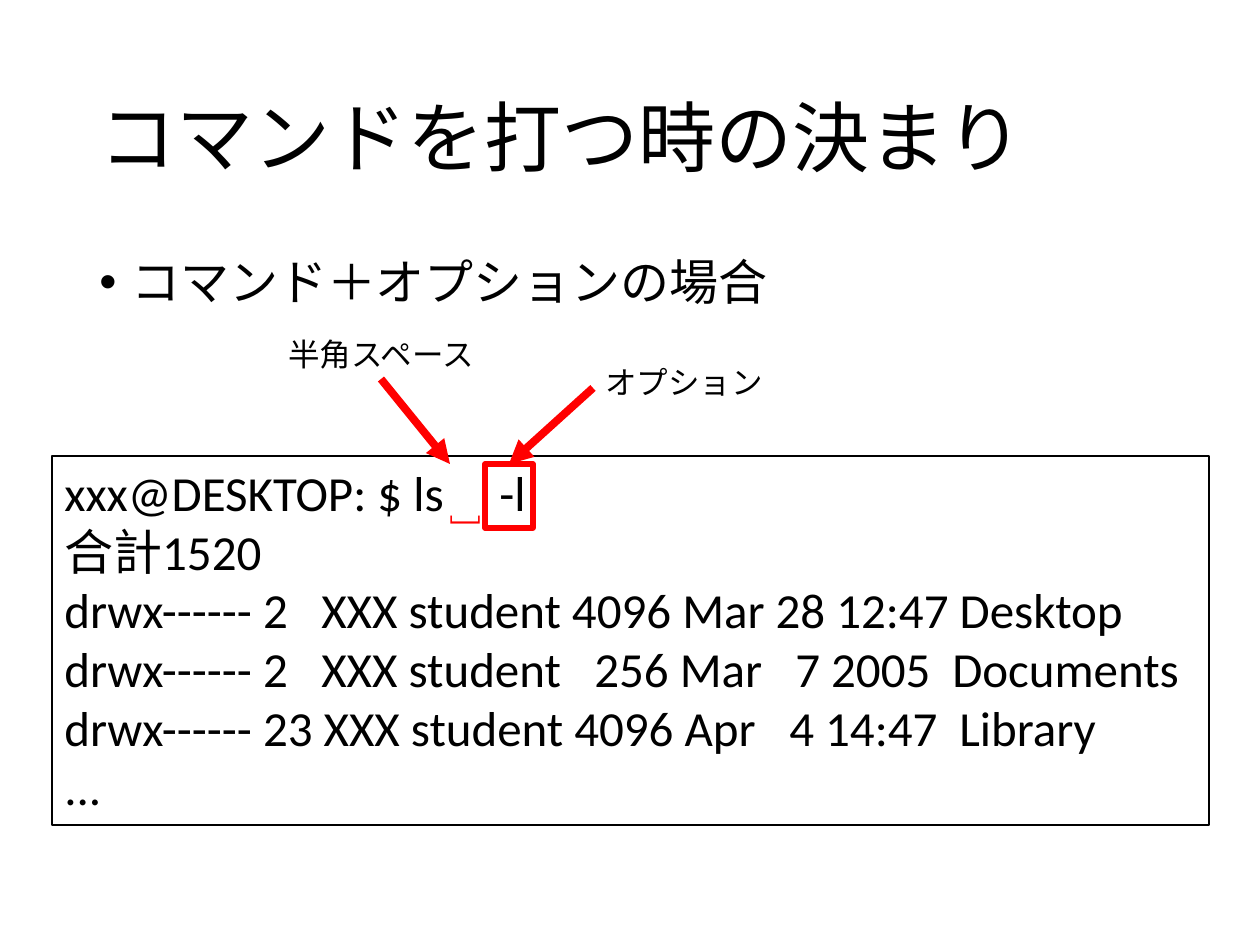
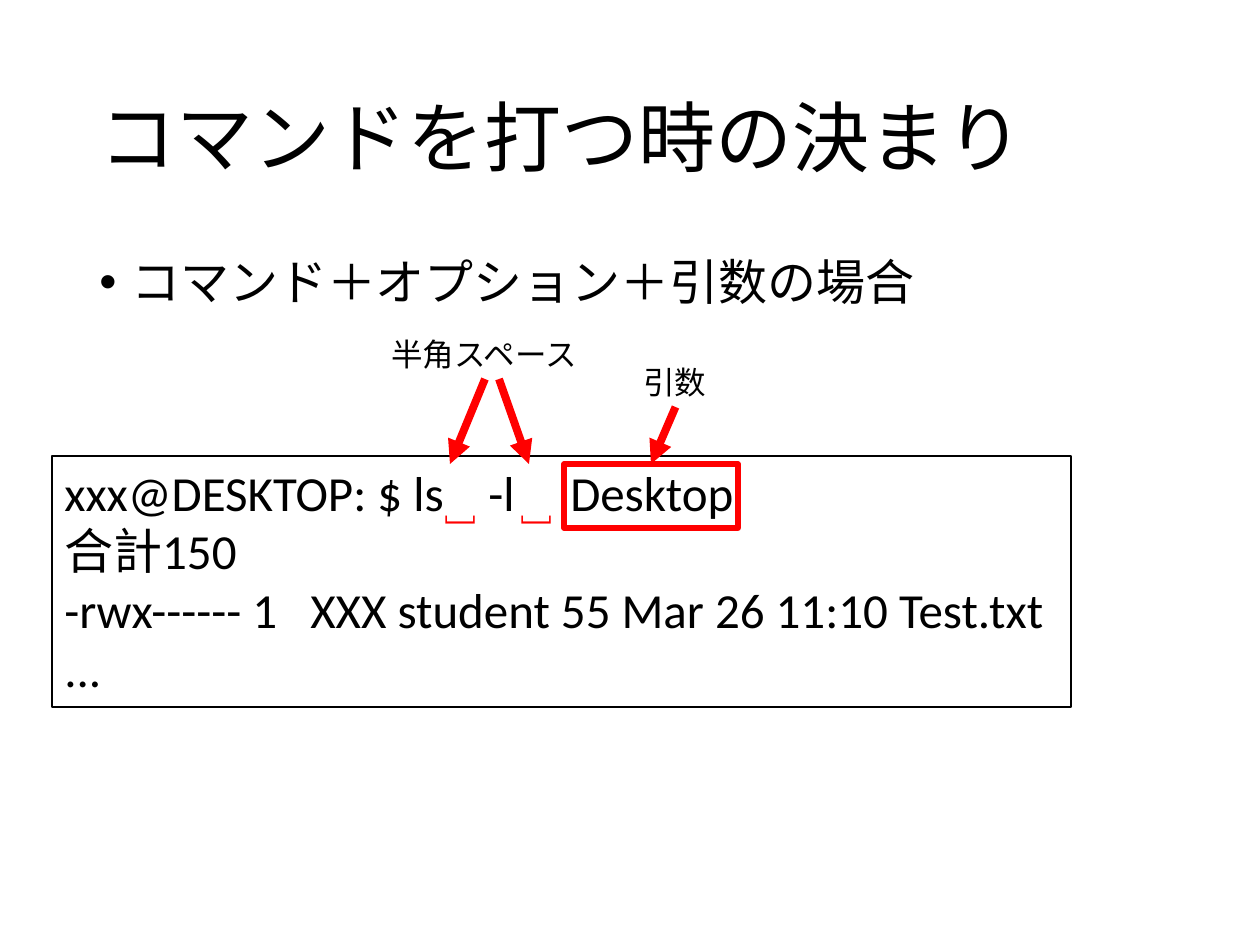
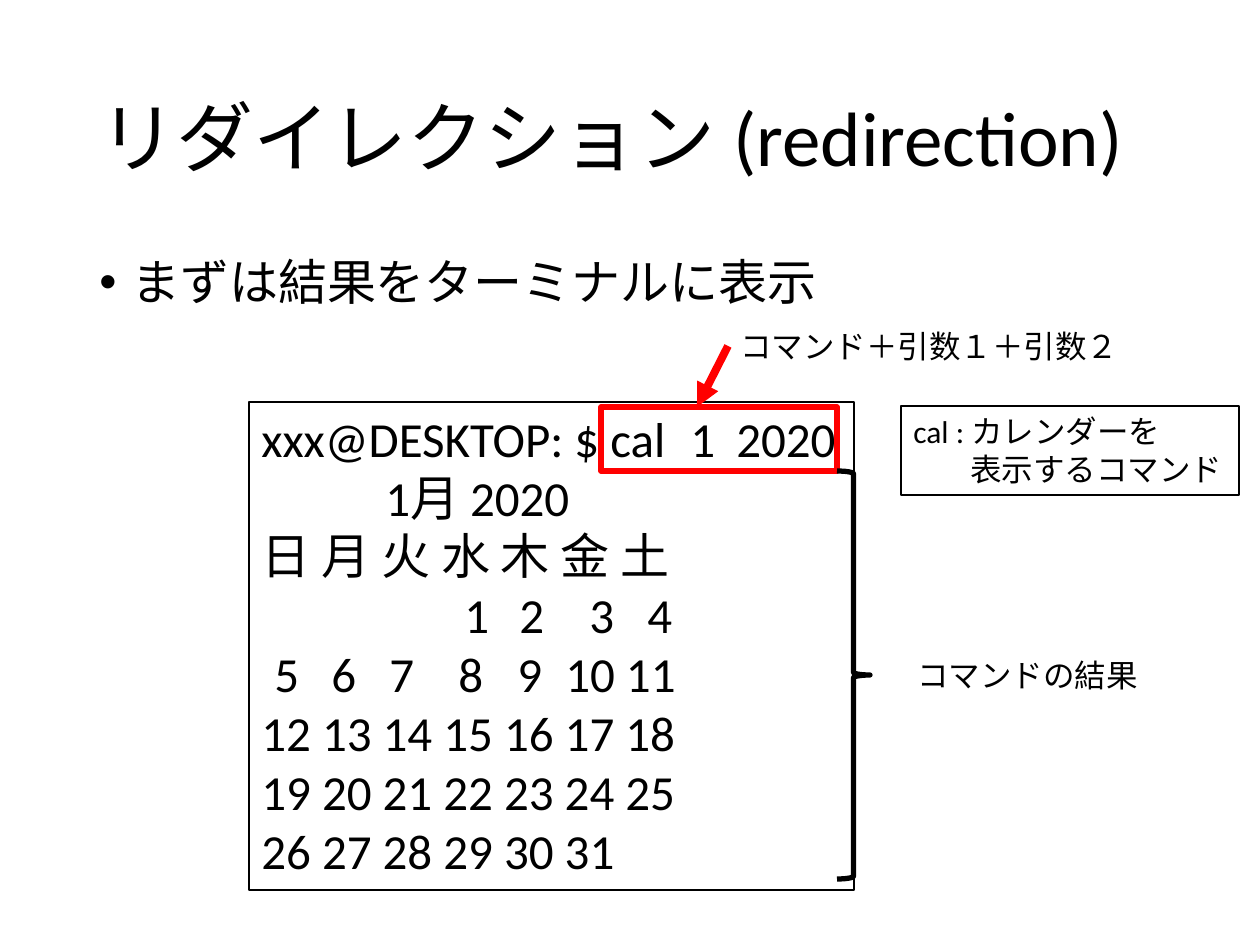
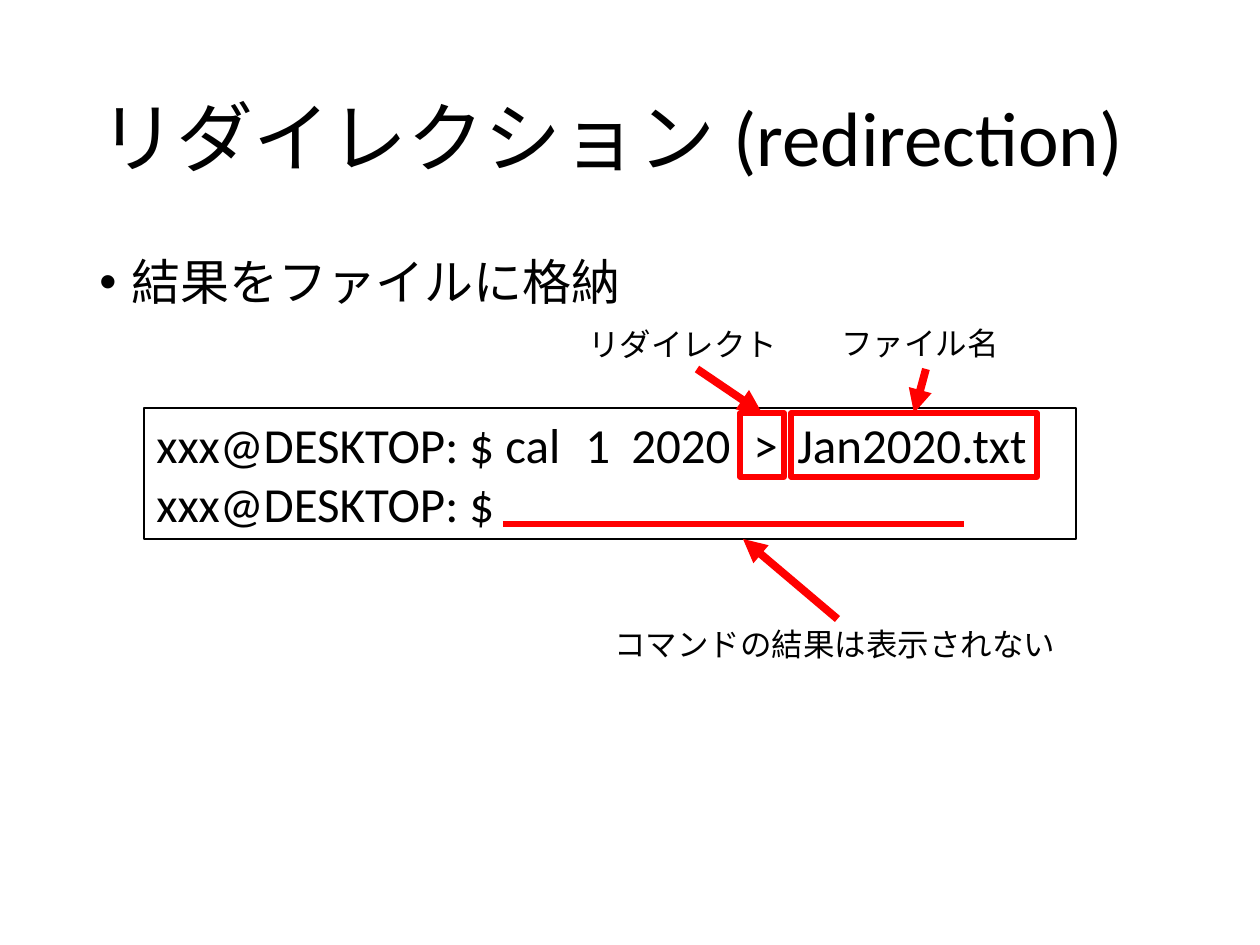
"""Build four slides on shell commands and redirection."""
from pptx import Presentation
from pptx.dml.color import RGBColor as Rgb
from pptx.enum.shapes import MSO_CONNECTOR as Conn, MSO_SHAPE as Kind
from pptx.enum.text import MSO_ANCHOR as Anchor, MSO_AUTO_SIZE as Auto, PP_ALIGN as Align
from pptx.oxml.ns import qn
from pptx.util import Pt
from lxml.etree import SubElement as Sub

HUES = {"ink": "000000", "mark": "FF0000"}
FONT = "Calibri"
SCALE = 914400 / 126
SIZE = (1260, 945)
TITLE = (87, 50, 1086, 183)
BODY = (87, 252, 1086, 600)
INDENT = 32
NEAR = 2
ROW = 50
GLYPH = (57, ROW)
FRAME = 64

RULES = "コマンドを打つ時の決まり"
REDIR = "リダイレクション (redirection)"
SLIDES = [
    {
        "title": RULES,
        "body": "コマンド＋オプションの場合",
        "boxes": [((52, 456, 1157, 369), 28, [
            ("xxx@DESKTOP: $ ls\t-l", [435]),
            ("合計1520", []),
            ("drwx------ 2\tXXX student 4096 Mar 28 12:47 Desktop", [257]),
            ("drwx------ 2\tXXX student\t256 Mar\t7 2005\tDocuments",
             [257, 530, 731, 888]),
            ("drwx------ 23 XXX student 4096 Apr\t4 14:47\tLibrary", [725, 895]),
            ("...", []),
        ])],
        "frames": [(485, 464, 48)],
        "labels": [("半角スペース", 276, 329, 217), ("オプション", 593, 357, 184)],
        "arrows": [(381, 379, 450, 464), (593, 388, 508, 464)],
        "gaps": [(436, 505)],
    },
    {
        "title": RULES,
        "body": "コマンド＋オプション＋引数の場合",
        "boxes": [((52, 456, 1019, 251), 28, [
            ("xxx@DESKTOP: $ ls\t-l\tDesktop", [424, 506]),
            ("合計150", []),
            ("-rwx------ 1\tXXX student 55 Mar 26 11:10 Test.txt", [246]),
            ("...", []),
        ])],
        "frames": [(564, 464, 174)],
        "labels": [("半角スペース", 379, 329, 217), ("引数", 631, 357, 89)],
        "arrows": [(485, 379, 450, 464), (677, 407, 651, 464), (499, 379, 529, 464)],
        "gaps": [(431, 505), (507, 505)],
    },
    {
        "title": REDIR,
        "body": "まずは結果をターミナルに表示",
        "boxes": [
            ((249, 402, 605, 488), 28, [
                ("xxx@DESKTOP: $ cal\t1\t2020", [429, 475]),
                ("\t1月 2020", [124]),
                ("日 月 火 水 木 金 土", []),
                ("\t1\t2\t3\t4", [203, 258, 328, 386]),
                ("\t5\t6\t7\t8\t9\t10 11", [13, 70, 128, 197, 256, 304]),
                ("12 13 14 15 16 17 18", []),
                ("19 20 21 22 23 24 25", []),
                ("26 27 28 29 30 31", []),
            ]),
            ((901, 406, 338, 89), 18, [
                ("cal : カレンダーを", []),
                ("\t表示するコマンド", [57]),
            ]),
        ],
        "frames": [(601, 407, 236)],
        "labels": [("コマンド＋引数１＋引数２", 728, 321, 407),
                   ("コマンドの結果", 905, 650, 248)],
        "arrows": [(728, 348, 697, 407)],
        "braces": [(837, 471, 33, 408)],
    },
    {
        "title": REDIR,
        "body": "結果をファイルに格納",
        "boxes": [((144, 408, 932, 131), 28, [
            ("xxx@DESKTOP: $ cal\t1\t2020\t>\tJan2020.txt", [429, 475, 597, 641]),
            ("xxx@DESKTOP: $", []),
        ])],
        "frames": [(740, 413, 44), (791, 413, 246)],
        "labels": [("リダイレクト", 576, 319, 217),
                   ("コマンドの結果は表示されない", 602, 619, 471),
                   ("ファイル名", 829, 318, 184)],
        "arrows": [(697, 369, 762, 413), (926, 369, 915, 413), (837, 619, 743, 539)],
        "rules": [(503, 524, 964, 524)],
    },
]


def emu(*nums):
    """Turn px into EMU."""
    return [round(n * SCALE) for n in nums]


def style(item, **vals):
    """Set each given attribute on an item."""
    for name, val in vals.items():
        setattr(item, name, val)


def stroke(line, hue, width):
    """Give a line its colour and width."""
    line.color.rgb = Rgb.from_string(HUES[hue])
    line.width = Pt(width)


def write(shape, lines, size, hue="ink", **frame):
    """Fill a shape with lines of text and their tab stops."""
    text = shape.text_frame
    style(text, **frame)
    for i, (words, stops) in enumerate(lines):
        par = text.paragraphs[0] if i == 0 else text.add_paragraph()
        par.alignment = Align.LEFT
        run = par.add_run()
        run.text = words
        style(run.font, name=FONT, size=Pt(size))
        run.font.color.rgb = Rgb.from_string(HUES[hue])
        if stops:
            tabs = Sub(par._p.get_or_add_pPr(), qn("a:tabLst"))
            for stop in emu(*stops):
                Sub(tabs, qn("a:tab"), pos=str(stop), algn="l")
    return text.paragraphs[0]


def note(slide, words, area, size, **look):
    """Add a text box with one line."""
    box = slide.shapes.add_textbox(*emu(*area))
    return box, write(box, [(words, [])], size, **look)


def outline(slide, kind, area, hue, width):
    """Add an unfilled shape with a coloured edge."""
    shape = slide.shapes.add_shape(kind, *emu(*area))
    shape.shadow.inherit = False
    shape.fill.background()
    stroke(shape.line, hue, width)
    return shape


def bullet(par):
    """Make a paragraph a bullet point."""
    style(par, line_spacing=0.9, space_before=Pt(10))
    props = par._p.get_or_add_pPr()
    step = emu(INDENT)[0]
    props.set("marL", str(step))
    props.set("indent", str(-step))
    Sub(props, qn("a:buFont"), typeface="Arial")
    Sub(props, qn("a:buChar"), char="•")


def join(link, ends, hosts):
    """Tie the ends of a link to the side middles they touch."""
    for tie, (x, y) in zip((link.begin_connect, link.end_connect), ends):
        for host, (left, top, wide, high) in hosts:
            mid, half = left + wide / 2, top + high / 2
            sites = [(mid, top), (left, half), (mid, top + high), (left + wide, half)]
            for i, (sx, sy) in enumerate(sites):
                if abs(sx - x) <= NEAR and abs(sy - y) <= NEAR:
                    tie(host, i)


def link(slide, ends, width, hosts=(), head=False):
    """Add a straight line, with an arrowhead if asked."""
    line = slide.shapes.add_connector(Conn.STRAIGHT, *emu(*ends))
    stroke(line.line, "mark", width)
    props = line._element.spPr
    if head:
        Sub(props.find(qn("a:ln")), qn("a:tailEnd"), type="triangle")
    Sub(props, qn("a:effectLst"))
    join(line, (ends[:2], ends[2:]), hosts)


def draw(slide, data):
    """Draw one slide from its data."""
    _, head = note(slide, data["title"], TITLE, 44, word_wrap=True,
                   vertical_anchor=Anchor.MIDDLE)
    head.line_spacing = 0.9
    _, point = note(slide, data["body"], BODY, 28, word_wrap=True)
    bullet(point)
    for area, size, lines in data["boxes"]:
        box = outline(slide, Kind.RECTANGLE, area, "ink", 0.75)
        write(box, lines, size, word_wrap=True, vertical_anchor=Anchor.TOP,
              auto_size=Auto.SHAPE_TO_FIT_TEXT)
    hosts = []
    for spot in data["frames"]:
        area = (*spot, FRAME)
        hosts.append((outline(slide, Kind.RECTANGLE, area, "mark", 3), area))
    grow = {"word_wrap": False, "auto_size": Auto.SHAPE_TO_FIT_TEXT}
    for words, *spot in data["labels"]:
        area = (*spot, ROW)
        hosts.append((note(slide, words, area, 18, **grow)[0], area))
    for spot in data.get("gaps", []):
        sign, _ = note(slide, "［", (*spot, *GLYPH), 18, hue="mark", **grow)
        sign.rotation = 270
    for area in data.get("braces", []):
        outline(slide, Kind.RIGHT_BRACE, area, "ink", 3)
    for ends in data["arrows"]:
        link(slide, ends, 4.5, hosts, head=True)
    for ends in data.get("rules", []):
        link(slide, ends, 3)


def main():
    """Build and save the slides."""
    deck = Presentation()
    deck.slide_width, deck.slide_height = emu(*SIZE)
    for data in SLIDES:
        draw(deck.slides.add_slide(deck.slide_layouts[6]), data)
    deck.save("out.pptx")


if __name__ == "__main__":
    main()
